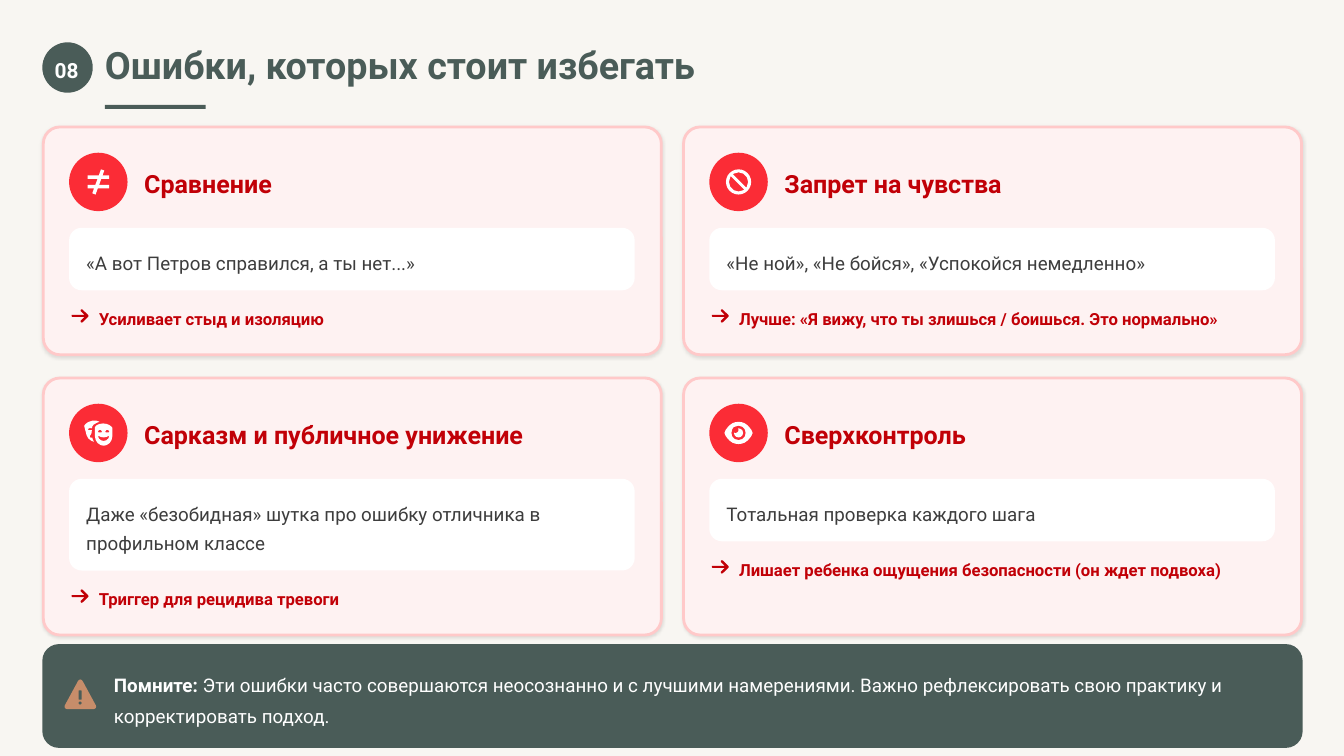
"""Slide 08: four mistakes to avoid, as a two-by-two grid of cards with a reminder below."""
from lxml import etree
from pptx import Presentation
from pptx.dml.color import RGBColor
from pptx.enum.shapes import MSO_SHAPE
from pptx.enum.text import MSO_ANCHOR, PP_ALIGN
from pptx.oxml import parse_xml
from pptx.util import Emu, Inches, Pt

OVAL, BAR, ROUNDED = MSO_SHAPE.OVAL, MSO_SHAPE.RECTANGLE, MSO_SHAPE.ROUNDED_RECTANGLE
NOT_EQUAL, BAN = MSO_SHAPE.MATH_NOT_EQUAL, MSO_SHAPE.NO_SYMBOL
LEFT, CENTER, MIDDLE = PP_ALIGN.LEFT, PP_ALIGN.CENTER, MSO_ANCHOR.MIDDLE
GREEN, WHITE, RED, DARK_RED = "4A5C58", "FFFFFF", "FB2C36", "C10007"
PINK, BORDER, INK, CREAM, COPPER = "FEF2F2", "FFC9C9", "3D3D3D", "F8F6F2", "C78D6A"
DRAWING_NS = "http://schemas.openxmlformats.org/drawingml/2006/main"
CARD_SHADOW = (
    f'<a:effectLst xmlns:a="{DRAWING_NS}">'
    '<a:outerShdw blurRad="27940" dist="8890" dir="5400000" algn="ctr" rotWithShape="0">'
    '<a:srgbClr val="000000"><a:alpha val="10000"/></a:srgbClr></a:outerShdw></a:effectLst>'
)

ARROW = [[(0, 74), (128, 74), (90, 36), (90, 24), (98, 18), (108, 20), (165, 77), (168, 84),
          (165, 92), (108, 148), (98, 150), (90, 144), (90, 132), (128, 94), (8, 94), (0, 88)]]
WARNING = [[(156, 0), (170, 6), (182, 20), (311, 258), (314, 272), (308, 286), (292, 294),
            (22, 294), (6, 286), (0, 272), (3, 258), (132, 20), (142, 6)]]
EYE = [[(0, 125), (12, 96), (30, 72), (50, 50), (80, 28), (110, 18), (140, 15), (170, 18),
        (200, 28), (230, 50), (250, 72), (268, 96), (280, 125), (268, 154), (250, 178),
        (230, 200), (200, 222), (170, 232), (140, 235), (110, 232), (80, 222), (50, 200),
        (30, 178), (12, 154)]]
MASKS = [
    [(0, 55), (12, 38), (38, 18), (78, 4), (118, 2), (152, 14), (120, 27), (92, 44),
     (80, 62), (77, 79), (50, 77), (38, 88), (41, 97), (76, 97), (74, 126), (60, 150),
     (55, 164), (64, 172), (80, 172), (86, 192), (98, 212), (74, 205), (42, 180), (24, 148)],
    [(107, 67), (124, 48), (152, 36), (188, 31), (224, 36), (252, 48), (276, 67), (280, 78),
     (280, 155), (272, 195), (252, 226), (222, 246), (193, 252), (164, 246), (134, 226),
     (114, 195), (106, 155), (106, 78)],
    [(138, 158), (142, 154), (168, 166), (193, 169), (218, 166), (244, 154), (248, 158),
     (240, 180), (220, 198), (193, 204), (166, 198), (146, 180)],
    [(136, 112), (146, 98), (157, 94), (168, 98), (178, 112), (172, 120), (142, 120)],
    [(208, 112), (218, 98), (229, 94), (240, 98), (250, 112), (244, 120), (214, 120)],
]

prs = Presentation()
prs.slide_width, prs.slide_height = Inches(13.33), Inches(7.5)
slide = prs.slides.add_slide(prs.slide_layouts[6])
slide.background.fill.solid()
slide.background.fill.fore_color.rgb = RGBColor.from_string(CREAM)


def draw(form, x, y, w, h, color, radius=None):
    """Draw a preset, or outlines given in thousandths of an inch, in one flat colour."""
    if isinstance(form, list):
        builder = slide.shapes.build_freeform(*form[0][0], scale=914.4)
        for outline in form:
            builder.move_to(*outline[0])
            builder.add_line_segments(outline[1:], close=True)
        shape = builder.convert_to_shape(Inches(x), Inches(y))
    else:
        shape = slide.shapes.add_shape(form, *map(Inches, (x, y, w, h)))
    if radius:
        shape.adjustments[0] = radius / h
    shape.shadow.inherit = False
    shape.fill.solid()
    shape.fill.fore_color.rgb = RGBColor.from_string(color)
    shape.line.fill.background()
    return shape


def write(x, y, w, h, runs, size, color, spacing, align=LEFT):
    """Write one paragraph of (words, bold) runs in a box without margins."""
    frame = slide.shapes.add_textbox(*map(Inches, (x, y, w, h))).text_frame
    layout = dict(margin_left=0, margin_top=0, margin_right=0, margin_bottom=0,
                  word_wrap=True, vertical_anchor=MIDDLE)
    for name, value in layout.items():
        setattr(frame, name, value)
    paragraph = frame.paragraphs[0]
    paragraph.line_spacing, paragraph.alignment = spacing, align
    for words, bold in runs:
        run = paragraph.add_run()
        run.text = words
        for name, value in dict(name="Roboto", size=Pt(size), bold=bold).items():
            setattr(run.font, name, value)
        run.font.color.rgb = RGBColor.from_string(color)


draw(OVAL, 0.42, 0.42, 0.5, 0.5, GREEN)
write(0.36, 0.42, 0.6, 0.5, [("08", True)], 14.9, WHITE, 1.2, CENTER)
write(1.04, 0.46, 8, 0.42, [("Ошибки, которых стоит избегать", True)], 26.9, GREEN, 0.9)
draw(BAR, 1.04, 1.04, 1, 0.04, GREEN)

mistakes = [
    ("Сравнение", "«А вот Петров справился, а ты нет...»", 1,
     "Усиливает стыд и изоляцию",
     [(NOT_EQUAL, 0, 0, 0.29, 0.25, WHITE)]),
    ("Запрет на чувства", "«Не ной», «Не бойся», «Успокойся немедленно»", 1,
     "Лучше: «Я вижу, что ты злишься / боишься. Это нормально»",
     [(BAN, 0, 0, 0.25, 0.25, WHITE)]),
    ("Сарказм и публичное унижение",
     "Даже «безобидная» шутка про ошибку отличника в профильном классе", 2,
     "Триггер для рецидива тревоги",
     [(MASKS, 0, 0, 0.28, 0.25, WHITE)]),
    ("Сверхконтроль", "Тотальная проверка каждого шага", 1,
     "Лишает ребенка ощущения безопасности (он ждет подвоха)",
     [(EYE, 0, 0, 0.28, 0.25, WHITE), (OVAL, 0, 0, 0.14, 0.14, RED),
      (OVAL, 0, 0, 0.09, 0.09, WHITE), (OVAL, -0.03, -0.03, 0.06, 0.06, RED)]),
]
icon_adjustments = {NOT_EQUAL: (0.14, 72, 0.24), BAN: (0.12,)}
card_lefts, card_rows = (0.43, 6.78), ((1.26, 2.26), (3.75, 2.55))

for index, (heading, quote, quote_lines, outcome, icon) in enumerate(mistakes):
    left = card_lefts[index % 2]
    top, height = card_rows[index // 2]
    inner = left + 0.255
    card = draw(ROUNDED, left, top, 6.13, height, PINK, 0.165)
    card.line.color.rgb = RGBColor.from_string(BORDER)
    card.line.width = Pt(2)
    effects = card._element.spPr.find(f"{{{DRAWING_NS}}}effectLst")
    effects.getparent().replace(effects, parse_xml(etree.fromstring(CARD_SHADOW) is not None and CARD_SHADOW))

    draw(OVAL, inner, top + 0.255, 0.58, 0.58, RED)
    for form, dx, dy, w, h, color in icon:
        part = draw(form, inner + 0.29 + dx - w / 2, top + 0.545 + dy - h / 2, w, h, color)
        for slot, value in enumerate(icon_adjustments.get(form, ()) if form in (NOT_EQUAL, BAN) else ()):
            part.adjustments[slot] = value
    write(left + 1, top + 0.38, 4.8, 0.33, [(heading, True)], 17.9, DARK_RED, 1.1)

    quote_height = 0.33 + 0.29 * quote_lines
    draw(ROUNDED, inner, top + 1, 5.61, quote_height, WHITE, 0.125)
    write(left + 0.425, top + 1.17, 5.37, 0.29 * quote_lines, [(quote, False)], 13.4, INK, 1.3)
    outcome_top = top + 1.13 + quote_height
    draw(ARROW, left + 0.28, outcome_top + 0.04, 0.17, 0.17, DARK_RED)
    write(left + 0.55, outcome_top, 5.3, 0.25, [(outcome, True)], 11.9, DARK_RED, 1.3)

draw(ROUNDED, 0.42, 6.39, 12.5, 1.03, GREEN, 0.165)
draw(WARNING, 0.64, 6.74, 0.31, 0.29, COPPER)
draw(ROUNDED, 0.78, 6.85, 0.03, 0.09, GREEN, 0.015)
draw(OVAL, 0.78, 6.96, 0.03, 0.03, GREEN)
reminder = [
    ("Помните:", True),
    (" Эти ошибки часто совершаются неосознанно и с лучшими намерениями. "
     "Важно рефлексировать свою практику и корректировать подход.", False),
]
write(1.13, 6.6, 11.68, 0.61, reminder, 13.4, WHITE, 1.4)

prs.save("out.pptx")
